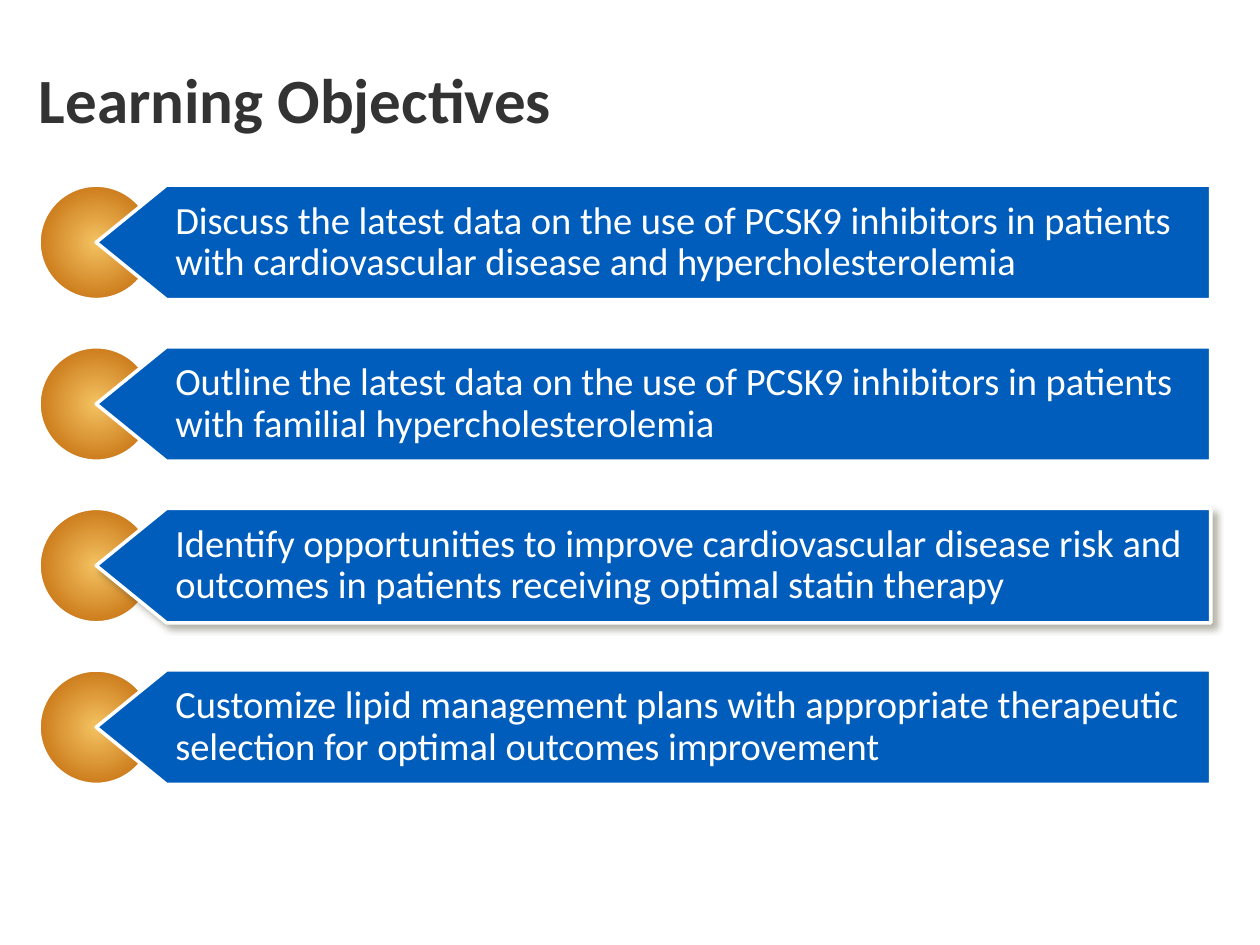
import pptx
import pptx.dml.color
import pptx.enum.shapes
import pptx.enum.text
import pptx.oxml
import pptx.oxml.ns
import pptx.util

Pt = pptx.util.Pt
COLORS = {"title": "333333", "banner": "005DBC", "white": "FFFFFF",
          "glow": "F4C261", "rim": "BC5F00", "shadow": "4A452A"}
OBJECTIVES = [
    "Discuss the latest data on the use of PCSK9 inhibitors in patients with cardiovascular disease and hypercholesterolemia",
    "Outline the latest data on the use of PCSK9 inhibitors in patients with familial hypercholesterolemia",
    "Identify opportunities to improve cardiovascular disease risk and outcomes in patients receiving optimal statin therapy",
    "Customize lipid management plans with appropriate therapeutic selection for optimal outcomes improvement",
]
SHADOWED = 2
LEFT, TOP, SIZE, PITCH = 22.3, 105.8, 65.4, 92.35
SHOULDER, RIGHT = 95.2, 691.9


def color(name):
    """Return the named colour."""
    return pptx.dml.color.RGBColor.from_string(COLORS[name])


def drawing(xml):
    """Build an element from markup with the a: prefix."""
    return pptx.oxml.parse_xml(xml.replace(">", " %s>" % pptx.oxml.ns.nsdecls("a"), 1))


class ObjectivesPage:
    """Hold the style and the current slide."""

    font = "Calibri"
    line_width = 2

    def __init__(self, deck):
        """Add a blank page to the deck."""
        self.page = deck.slides.add_slide(deck.slide_layouts[6])

    def set_text(self, shape, text, insets, **font):
        """Set one left-aligned paragraph, centred vertically."""
        frame = shape.text_frame
        sides = ("margin_left", "margin_top", "margin_right", "margin_bottom")
        settings = dict(zip(sides, map(Pt, insets)), word_wrap=True,
                        vertical_anchor=pptx.enum.text.MSO_ANCHOR.MIDDLE)
        for name, value in settings.items():
            setattr(frame, name, value)
        para = frame.paragraphs[0]
        para.alignment = pptx.enum.text.PP_ALIGN.LEFT
        para.line_spacing = 0.9
        span = para.add_run()
        span.text = text
        span.font.color.rgb = color(font.pop("color"))
        for name, value in dict(font, name=self.font).items():
            setattr(span.font, name, value)

    def outline(self, shape):
        """Give a shape the white outline and no shadow."""
        shape.shadow.inherit = False
        shape.line.color.rgb = color("white")
        shape.line.width = Pt(self.line_width)

    def title(self, text):
        """Add the title."""
        box = self.page.shapes.add_textbox(Pt(15.1), Pt(13.7), Pt(690), Pt(90))
        self.set_text(box, text, (7.2, 3.6, 7.2, 3.6), size=Pt(36), bold=True, color="title")

    def disc(self, top):
        """Add a disc with a radial gradient."""
        disc = self.page.shapes.add_shape(pptx.enum.shapes.MSO_SHAPE.OVAL,
                                          Pt(LEFT), Pt(top), Pt(SIZE), Pt(SIZE))
        self.outline(disc)
        disc.fill.gradient()
        for stop, name in zip(disc.fill.gradient_stops, ("glow", "rim")):
            stop.color.rgb = color(name)
        linear = disc.element.spPr.find(".//" + pptx.oxml.ns.qn("a:lin"))
        linear.getparent().replace(linear, drawing(
            '<a:path path="circle"><a:fillToRect l="50000" t="50000" r="50000" b="50000"/></a:path>'))

    def banner(self, top, text, shadowed):
        """Add a banner pointing at the centre of its disc."""
        bottom, middle = top + SIZE, top + SIZE / 2
        points = [(SHOULDER, bottom), (LEFT + SIZE / 2, middle), (SHOULDER, top), (RIGHT, top)]
        builder = self.page.shapes.build_freeform(Pt(RIGHT), Pt(bottom))
        builder.add_line_segments([(Pt(x), Pt(y)) for x, y in points])
        banner = builder.convert_to_shape()
        self.outline(banner)
        banner.fill.solid()
        banner.fill.fore_color.rgb = color("banner")
        if shadowed:
            effects = banner.element.spPr.find(pptx.oxml.ns.qn("a:effectLst"))
            effects.append(drawing(
                '<a:outerShdw blurRad="%d" dist="%d" dir="2700000" algn="tl" rotWithShape="0">'
                '<a:srgbClr val="%s"><a:alpha val="40000"/></a:srgbClr></a:outerShdw>'
                % (Pt(4), Pt(3), COLORS["shadow"])))
        self.set_text(banner, text, (45.2, 5.5, 10, 5.5), size=Pt(22), color="white")


def main():
    """Build the deck."""
    deck = pptx.Presentation()
    deck.slide_width, deck.slide_height = Pt(720), Pt(540)
    page = ObjectivesPage(deck)
    page.title("Learning Objectives")
    for index, objective in enumerate(OBJECTIVES):
        top = TOP + index * PITCH
        page.disc(top)
        page.banner(top, objective, index == SHADOWED)
    deck.save("out.pptx")


if __name__ == "__main__":
    main()
